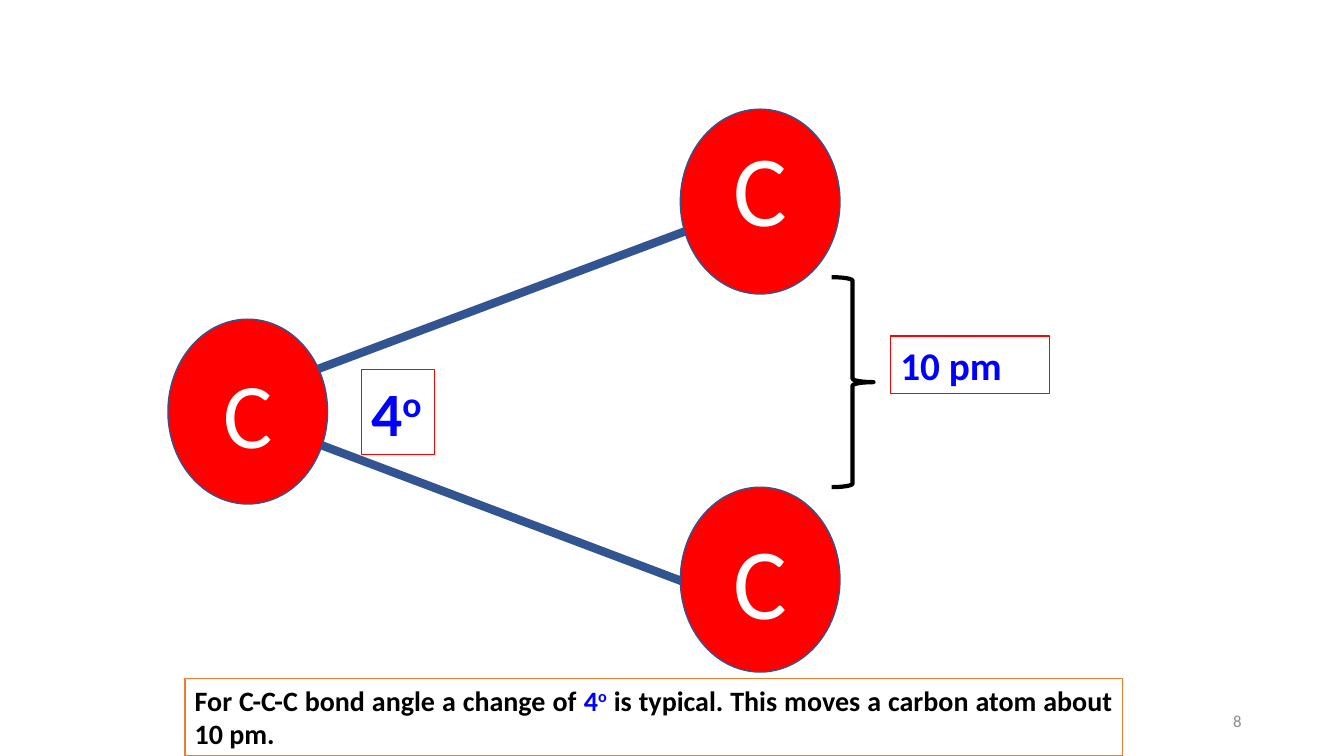
from pptx import Presentation
from pptx.dml.color import RGBColor
from pptx.enum.shapes import MSO_CONNECTOR, MSO_SHAPE
from pptx.enum.text import MSO_ANCHOR, MSO_AUTO_SIZE, PP_ALIGN
from pptx.oxml.ns import qn
from pptx.util import Pt
from lxml.etree import SubElement

PX = 9525  # EMU per px, 96 px to the inch
RED, BLUE, NAVY = "FF0000", "0000FF", "325491"
BLACK, WHITE, GREY, ORANGE = "000000", "FFFFFF", "8C8C8C", "ED7D31"

prs = Presentation()
prs.slide_width, prs.slide_height = 1280 * PX, 720 * PX
slide = prs.slides.add_slide(prs.slide_layouts[6])


def add_outlined(kind, box, line, width, fill=None):
    shape = slide.shapes.add_shape(kind, *(n * PX for n in box))
    shape.shadow.inherit = False
    if fill:
        shape.fill.solid()
        shape.fill.fore_color.rgb = RGBColor.from_string(fill)
    else:
        shape.fill.background()
    shape.line.color.rgb = RGBColor.from_string(line)
    shape.line.width = Pt(width)
    return shape


def write(shape, runs, size, align, anchor=MSO_ANCHOR.TOP, bold=False):
    """Fill the shape with one paragraph of (text, colour, superscript) runs."""
    frame = shape.text_frame
    frame.word_wrap = True
    frame.vertical_anchor = anchor
    paragraph = frame.paragraphs[0]
    paragraph.alignment = align
    for text, color, superscript in runs:
        run = paragraph.add_run()
        run.text = text
        run.font.name = "Calibri"
        run.font.size = Pt(size)
        run.font.bold = bold
        run.font.color.rgb = RGBColor.from_string(color)
        if superscript:
            run.font._element.set("baseline", "30000")
    return frame


# Bonds, drawn first so that the atoms cover their ends
for end_y in (216, 559):
    bond = slide.shapes.add_connector(
        MSO_CONNECTOR.STRAIGHT, 208 * PX, 387 * PX, 664 * PX, end_y * PX)
    bond.line.color.rgb = RGBColor.from_string(NAVY)
    bond.line.width = Pt(6)
    SubElement(bond._element.spPr, qn("a:effectLst"))

# Carbon atoms; the bottom inset lifts the letter of the upper one
for left, top, size, bottom_inset in ((648, 104, 72, 34), (160, 304, 66, 5), (648, 464, 72, 5)):
    atom = add_outlined(MSO_SHAPE.OVAL, (left, top, 152, 176), NAVY, 1, RED)
    letter = write(atom, [("C", WHITE, False)], size, PP_ALIGN.CENTER, MSO_ANCHOR.MIDDLE)
    letter.margin_bottom = bottom_inset * PX

# Angle, displacement and caption
degrees = [("4", BLUE, False), ("o", BLUE, True)]
angle = add_outlined(MSO_SHAPE.RECTANGLE, (344, 352, 70, 81), RED, 0.75)
angle_text = write(angle, degrees, 44, PP_ALIGN.LEFT, bold=True)
angle_text.word_wrap = False

displacement = add_outlined(MSO_SHAPE.RECTANGLE, (848, 320, 152, 55), RED, 0.75)
displacement_text = write(displacement, [("10 pm", BLUE, False)], 28, PP_ALIGN.LEFT, bold=True)
add_outlined(MSO_SHAPE.RIGHT_BRACE, (792, 264, 40, 200), BLACK, 3)

caption = add_outlined(MSO_SHAPE.RECTANGLE, (176, 646, 893, 74), ORANGE, 1, WHITE)
caption_text = write(caption, [
    ("For C-C-C bond angle a change of ", BLACK, False),
    *degrees,
    (" is typical. This moves a carbon atom about 10 pm.", BLACK, False),
], 20, PP_ALIGN.JUSTIFY, bold=True)

for frame in (angle_text, displacement_text, caption_text):
    frame.auto_size = MSO_AUTO_SIZE.SHAPE_TO_FIT_TEXT

page_number = slide.shapes.add_textbox(904 * PX, 667 * PX, 288 * PX, 38 * PX)
write(page_number, [("8", GREY, False)], 12, PP_ALIGN.RIGHT, MSO_ANCHOR.MIDDLE)

prs.save("out.pptx")
